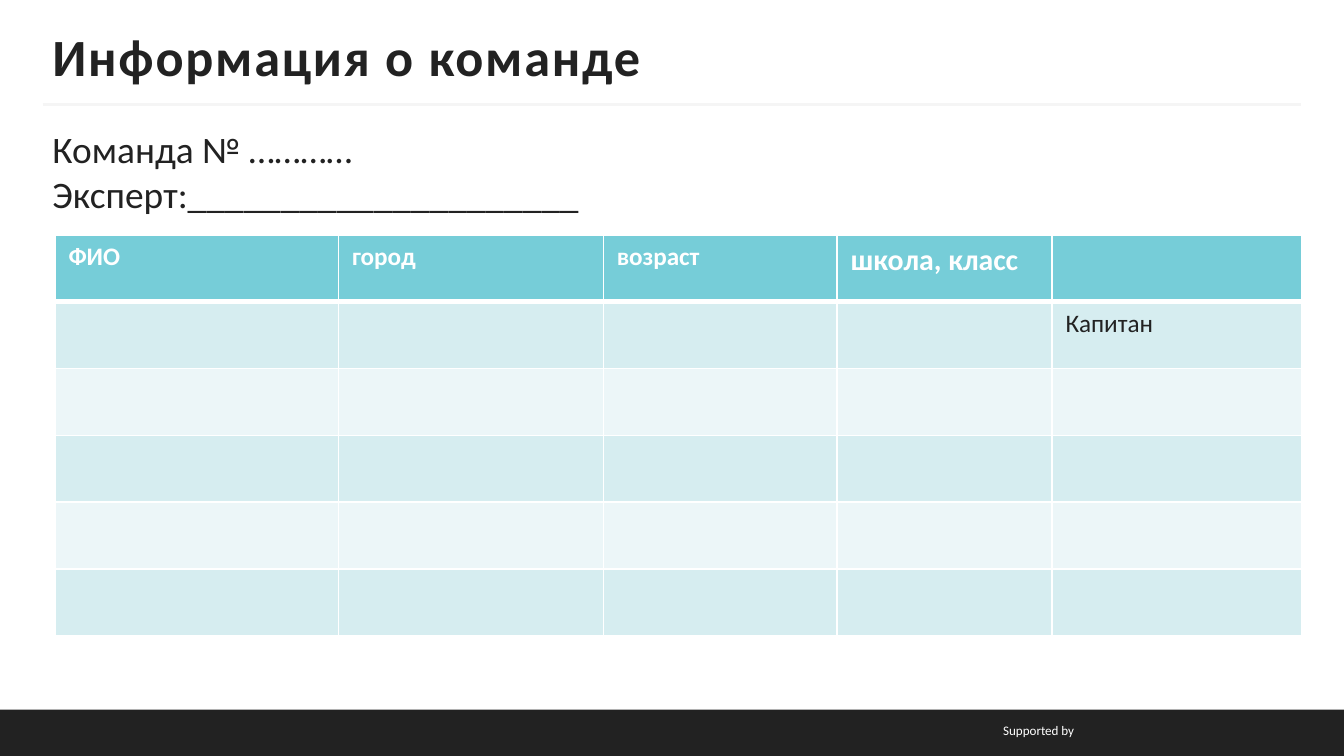
import dataclasses

import lxml.etree
import pptx
import pptx.dml.color
import pptx.enum.shapes
import pptx.enum.text
import pptx.oxml.ns
import pptx.util

Inches = pptx.util.Inches
Align = pptx.enum.text.PP_ALIGN
Anchor = pptx.enum.text.MSO_ANCHOR

COLORS = {
    "dark": "222222",
    "white": "FFFFFF",
    "rule": "F5F5F5",
    "header": "76CDD8",
    "odd_row": "D6EDF0",
    "even_row": "ECF6F8",
}
FONT = "Calibri"
SLIDE_WIDTH = Inches(10)
SLIDE_HEIGHT = SLIDE_WIDTH * 9 // 16
ROW_COUNT = 6
TABLE_HEIGHT = 2.98


@dataclasses.dataclass
class Column:
    heading: str
    width: float
    size: float = 13.5
    first_entry: str = ""


COLUMNS = [
    Column("ФИО", 2.11),
    Column("город", 1.97),
    Column("возраст", 1.74),
    Column("школа, класс", 1.6, size=16),
    Column("", 1.86, first_entry="Капитан"),
]


def color(name: str) -> pptx.dml.color.RGBColor:
    return pptx.dml.color.RGBColor.from_string(COLORS[name])


def write_text(text_frame, text: str, *, size: float, fill: str = "dark", bold: bool = False,
               align=Align.LEFT, spacing: int = 0) -> None:
    text_frame.text = text
    for paragraph in text_frame.paragraphs:
        paragraph.alignment = align
        for run in paragraph.runs:
            run.font.name = FONT
            run.font.size = pptx.util.Pt(size)
            run.font.bold = bold
            run.font.color.rgb = color(fill)
            if spacing:
                run.font._element.set("spc", str(spacing))


def place(shape, left: float, top: float, width: float, height: float) -> None:
    shape.left, shape.top = Inches(left), Inches(top)
    shape.width, shape.height = Inches(width), Inches(height)


def set_margins(text_frame, horizontal: float, vertical: float) -> None:
    text_frame.margin_left = text_frame.margin_right = Inches(horizontal)
    text_frame.margin_top = text_frame.margin_bottom = Inches(vertical)


def add_footer(slide) -> None:
    bar_top = Inches(5.28)
    bar = slide.shapes.add_shape(pptx.enum.shapes.MSO_SHAPE.RECTANGLE,
                                 0, bar_top, SLIDE_WIDTH, SLIDE_HEIGHT - bar_top)
    bar.shadow.inherit = False
    bar.fill.solid()
    bar.fill.fore_color.rgb = color("dark")
    bar.line.fill.background()
    label = slide.shapes.add_textbox(Inches(5.44), Inches(5.33), Inches(2.65), Inches(0.22))
    label.text_frame.word_wrap = True
    write_text(label.text_frame, "Supported by", size=7, fill="white", align=Align.RIGHT)


def add_title(slide) -> None:
    rule = slide.shapes.add_connector(pptx.enum.shapes.MSO_CONNECTOR.STRAIGHT,
                                      Inches(0.32), Inches(0.78), Inches(9.68), Inches(0.78))
    rule.line.color.rgb = color("rule")
    rule.line.width = pptx.util.Pt(1.5)
    lxml.etree.SubElement(rule._element.spPr, pptx.oxml.ns.qn("a:effectLst"))
    title = slide.shapes.title
    place(title, 0.39, 0.25, 9.22, 0.33)
    frame = title.text_frame
    frame.auto_size = pptx.enum.text.MSO_AUTO_SIZE.NONE
    frame.word_wrap = False
    frame.vertical_anchor = Anchor.MIDDLE
    set_margins(frame, 0, 0.05)
    write_text(frame, "Информация о команде", size=28, bold=True, spacing=100)


def add_team_details(slide) -> None:
    details = slide.shapes.add_textbox(Inches(0.39), Inches(0.94), Inches(9.3), Inches(3.96))
    details.text_frame.word_wrap = True
    set_margins(details.text_frame, 0, 0)
    write_text(details.text_frame, "Команда № …………\nЭксперт:_____________________", size=20)


def set_borders(cell, widths: dict[str, float]) -> None:
    properties = cell._tc.get_or_add_tcPr()
    for side, width in widths.items():
        line = lxml.etree.SubElement(properties, pptx.oxml.ns.qn(f"a:ln{side}"),
                                     w=str(pptx.util.Pt(width)))
        fill = lxml.etree.SubElement(line, pptx.oxml.ns.qn("a:solidFill"))
        lxml.etree.SubElement(fill, pptx.oxml.ns.qn("a:srgbClr"), val=COLORS["white"])


def add_members_table(slide) -> None:
    width = sum(column.width for column in COLUMNS)
    table = slide.shapes.add_table(ROW_COUNT, len(COLUMNS), Inches(0.41), Inches(1.75),
                                   Inches(width), Inches(TABLE_HEIGHT)).table
    for column_index, column in enumerate(COLUMNS):
        table.columns[column_index].width = Inches(column.width)
        for row_index in range(ROW_COUNT):
            cell = table.cell(row_index, column_index)
            is_header = row_index == 0
            set_borders(cell, {"L": 1, "R": 1, "T": 3 if row_index == 1 else 1,
                               "B": 3 if is_header else 1})
            band = "header" if is_header else "odd_row" if row_index % 2 else "even_row"
            cell.fill.solid()
            cell.fill.fore_color.rgb = color(band)
            if is_header and column.heading:
                write_text(cell.text_frame, column.heading, size=column.size,
                           fill="white", bold=True)
            elif row_index == 1 and column.first_entry:
                write_text(cell.text_frame, column.first_entry, size=column.size)


def main() -> None:
    """Build the team information slide."""
    presentation = pptx.Presentation()
    presentation.slide_width, presentation.slide_height = SLIDE_WIDTH, SLIDE_HEIGHT
    slide = presentation.slides.add_slide(presentation.slide_layouts[5])
    add_footer(slide)
    add_title(slide)
    add_team_details(slide)
    add_members_table(slide)
    presentation.save("out.pptx")


if __name__ == "__main__":
    main()
